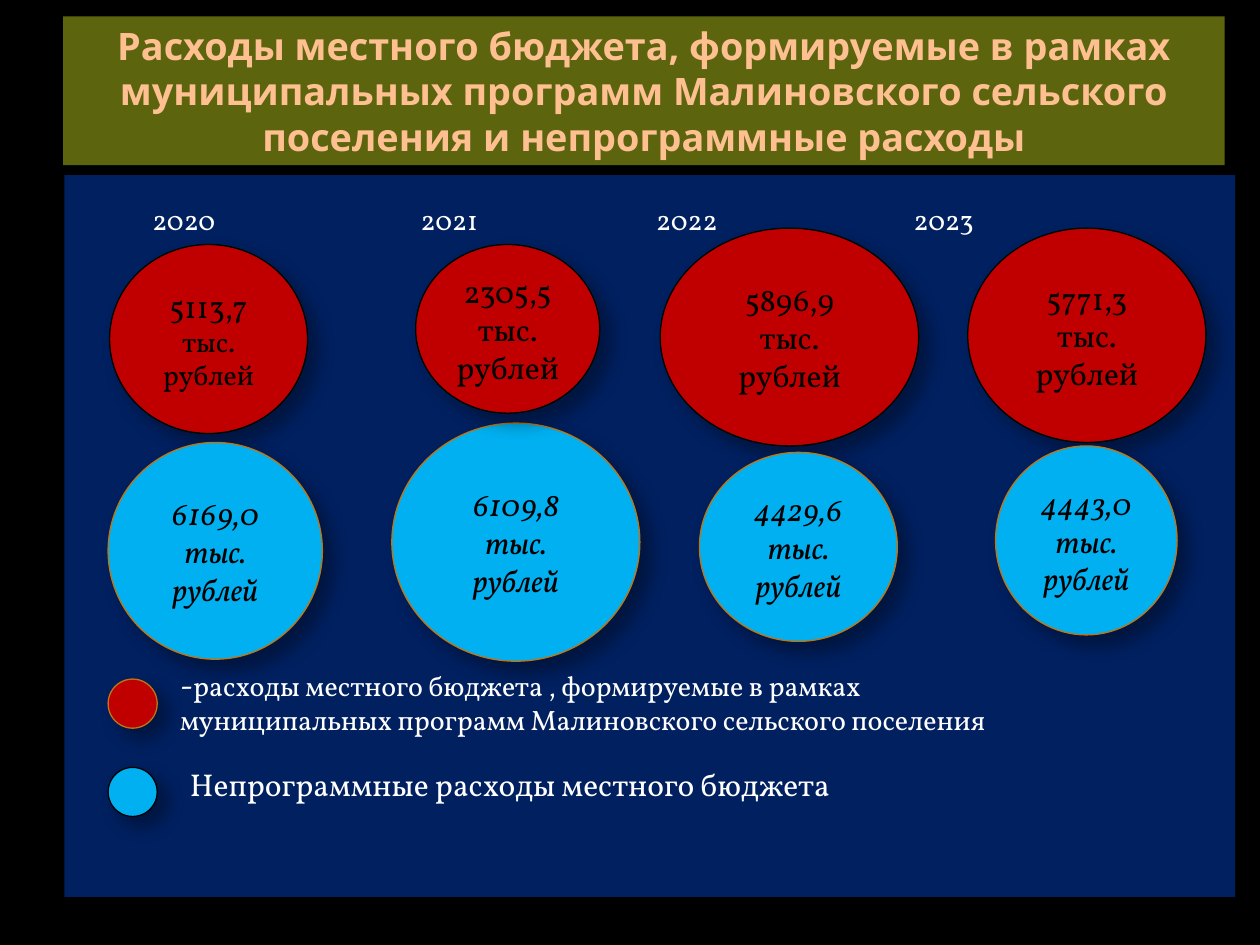
from lxml import etree
from pptx import Presentation
from pptx.dml.color import RGBColor
from pptx.enum.shapes import MSO_SHAPE
from pptx.enum.text import MSO_ANCHOR, MSO_AUTO_SIZE, PP_ALIGN
from pptx.oxml.ns import qn
from pptx.util import Cm, Pt

OVAL = MSO_SHAPE.OVAL
CENTER, LEFT = PP_ALIGN.CENTER, PP_ALIGN.LEFT
TOP, MIDDLE = MSO_ANCHOR.TOP, MSO_ANCHOR.MIDDLE
NO_AUTOFIT = MSO_AUTO_SIZE.NONE

SERIF, SANS = "Vollkorn", "Noto Sans"
BLACK, WHITE, BRONZE = "000000", "FFFFFF", "C07512"
RED, BLUE = "C00000", "00B0F0"
TITLE = (
    "Расходы местного бюджета, формируемые в рамках муниципальных программ "
    "Малиновского сельского поселения и непрограммные расходы"
)
FIRST_YEAR = "2020"
LATER_YEARS = (("2021", 8.23), ("2022", 12.98), ("2023", 18.17))
PROGRAM, OTHER = (RED, BLACK, False), (BLUE, BRONZE, True)
EXPENSES = (
    ("5113,7", PROGRAM, (2.21, 4.93, 3.99, 3.81), 16),
    ("5896,9", PROGRAM, (13.31, 4.6, 5.21, 4.39), 18),
    ("6169,0", OTHER, (2.18, 8.92, 4.32, 4.37), 18),
    ("6109,8", OTHER, (7.9, 8.53, 5, 4.8), 18),
    ("2305,5", PROGRAM, (8.38, 4.93, 3.71, 3.4), 18),
    ("4429,6", OTHER, (14.1, 9.12, 3.99, 3.81), 18),
    ("5771,3", PROGRAM, (19.51, 4.6, 4.8, 4.32), 18),
    ("4443,0", OTHER, (20.07, 8.99, 3.66, 3.81), 18),
)
LEGEND = (
    (
        RED, BRONZE, 13.69, (3.38, 13.28, 18.52, 1.7),
        (
            ("-", 18),
            ("расходы местного бюджета , формируемые в рамках муниципальных "
             "программ Малиновского сельского поселения", 16),
        ),
    ),
    (
        BLUE, BLACK, 15.47, (3.58, 15.29, 17.48, 1.02),
        (("Непрограммные расходы местного бюджета", 18),),
    ),
)


def color(value):
    """Turn a hex string into a colour."""
    return RGBColor.from_string(value)


def paint(target, value):
    """Give a shape or background a solid fill."""
    target.fill.solid()
    target.fill.fore_color.rgb = color(value)


def style(font, size, value, name=SERIF):
    """Set the face, size and colour of a font."""
    font.name = name
    font.size = Pt(size)
    font.color.rgb = color(value)


def place(box, at):
    """Move a box to left, top, width and height in centimetres."""
    box.left, box.top, box.width, box.height = map(Cm, at)


def fill_title(box):
    """Format the title placeholder and write the title."""
    place(box, (1.27, 0.33, 23.42, 3))
    paint(box, "5C650D")
    frame = box.text_frame
    frame.text = TITLE
    frame.auto_size = NO_AUTOFIT
    frame.vertical_anchor = MIDDLE
    para = frame.paragraphs[0]
    para.alignment = CENTER
    style(para.font, 21.6, "FFC091", SANS)
    para.font.bold = True


def fill_panel(box):
    """Turn the body placeholder into a panel that starts with the first year."""
    place(box, (1.3, 3.53, 23.6, 14.55))
    paint(box, "002060")
    frame = box.text_frame
    frame.text = FIRST_YEAR
    frame.auto_size = NO_AUTOFIT
    frame.vertical_anchor = TOP
    frame.margin_left, frame.margin_top = Cm(1.77), Cm(0.55)
    para = frame.paragraphs[0]
    para.alignment = LEFT
    para.space_before = Pt(0)
    settings = para._p.get_or_add_pPr()
    settings.set("marL", "0")
    settings.set("indent", "0")
    etree.SubElement(settings, qn("a:buNone"))
    style(para.font, 16, WHITE)


def add_label(page, at, parts):
    """Add a white text box made of sized pieces of text."""
    frame = page.shapes.add_textbox(*map(Cm, at)).text_frame
    frame.word_wrap = True
    para = frame.paragraphs[0]
    for text, size in parts:
        span = para.add_run()
        span.text = text
        style(span.font, size, WHITE)


def add_shadow(shape):
    """Cast a soft shadow to the lower right."""
    shape.shadow.inherit = False
    effects = shape._element.spPr.find(qn("a:effectLst"))
    shadow = etree.SubElement(
        effects, qn("a:outerShdw"), blurRad=str(Pt(10.2)), dist=str(Pt(8)),
        dir="2700000", algn="tl", rotWithShape="0",
    )
    tint = etree.SubElement(shadow, qn("a:srgbClr"), val=BLACK)
    etree.SubElement(tint, qn("a:alpha"), val="35000")


def add_circle(page, at, fill, outline):
    """Add a shadowed ellipse."""
    circle = page.shapes.add_shape(OVAL, *map(Cm, at))
    paint(circle, fill)
    circle.line.color.rgb = color(outline)
    circle.line.width = Pt(0.75)
    add_shadow(circle)
    return circle


def add_expense(page, amount, kind, at, unit_size):
    """Add a circle with an amount and its unit."""
    fill, outline, italic = kind
    frame = add_circle(page, at, fill, outline).text_frame
    frame.word_wrap = True
    frame.vertical_anchor = MIDDLE
    frame.text = f"{amount}\nтыс. рублей"
    for para, size in zip(frame.paragraphs, (18, unit_size)):
        para.alignment = CENTER
        style(para.font, size, BLACK)
        para.font.italic = italic


def add_legend(page, fill, outline, top, at, parts):
    """Add a legend marker and its label."""
    add_circle(page, (2.18, top, 0.99, 0.99), fill, outline)
    add_label(page, at, parts)


def main():
    """Build and save the slide."""
    deck = Presentation()
    deck.slide_width, deck.slide_height = Cm(25.4), Cm(19.05)
    page = deck.slides.add_slide(deck.slide_layouts[1])
    paint(page.background, BLACK)
    fill_title(page.shapes.title)
    fill_panel(page.placeholders[1])
    for year, left in LATER_YEARS:
        add_label(page, (left, 3.95, 2, 0.94), ((year, 16),))
    for expense in EXPENSES:
        add_expense(page, *expense)
    for entry in LEGEND:
        add_legend(page, *entry)
    deck.save("out.pptx")


if __name__ == "__main__":
    main()
